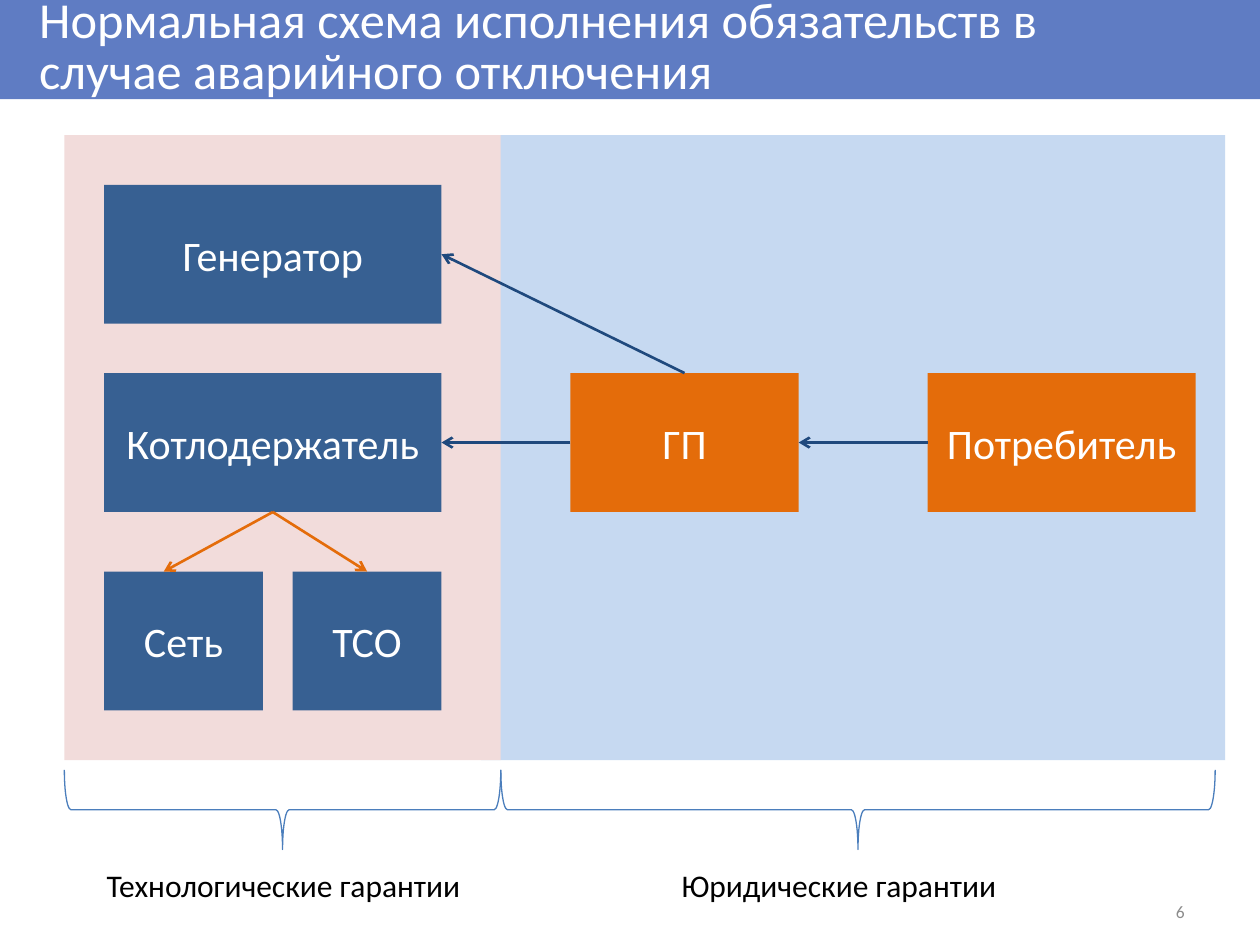
"""Build a slide on how obligations are met after an emergency outage."""
from dataclasses import dataclass

from lxml import etree
from pptx import Presentation
from pptx.dml.color import RGBColor
from pptx.enum.shapes import MSO_CONNECTOR, MSO_SHAPE
from pptx.enum.text import MSO_ANCHOR, MSO_AUTO_SIZE, PP_ALIGN
from pptx.oxml.ns import qn
from pptx.util import Pt

RECTANGLE, LEFT_BRACE = MSO_SHAPE.RECTANGLE, MSO_SHAPE.LEFT_BRACE
STRAIGHT = MSO_CONNECTOR.STRAIGHT
MIDDLE = MSO_ANCHOR.MIDDLE
LEFT, CENTER, RIGHT = PP_ALIGN.LEFT, PP_ALIGN.CENTER, PP_ALIGN.RIGHT
FIXED_SIZE = MSO_AUTO_SIZE.NONE
TOP_SIDE, LEFT_SIDE, BOTTOM_SIDE, RIGHT_SIDE = range(4)
TITLE_ONLY = 5


@dataclass(frozen=True)
class Theme:
    """Colours, font and type sizes of the slide."""
    font: str = "Calibri"
    band: str = "5F7CC3"
    legal_panel: str = "C6D9F1"
    technical_panel: str = "F2DCDB"
    blue_box: str = "376092"
    orange: str = "E46C0A"
    navy: str = "1F497D"
    brace: str = "4B7EBC"
    white: str = "FFFFFF"
    black: str = "000000"
    grey: str = "8C8C8C"
    title_size: float = 28.8
    box_size: float = 24
    label_size: float = 18
    number_size: float = 10


THEME = Theme()


def format_text(text_frame, text, size, color, alignment=LEFT):
    """Write one paragraph and return it formatted."""
    text_frame.word_wrap = True
    text_frame.text = text
    paragraph = text_frame.paragraphs[0]
    paragraph.alignment = alignment
    paragraph.font.name = THEME.font
    paragraph.font.size = Pt(size)
    paragraph.font.color.rgb = RGBColor.from_string(color)
    return paragraph


def add_rectangle(slide, left, top, width, height, color):
    """Add a plain filled rectangle."""
    shape = slide.shapes.add_shape(RECTANGLE, Pt(left), Pt(top), Pt(width), Pt(height))
    shape.shadow.inherit = False
    shape.fill.solid()
    shape.fill.fore_color.rgb = RGBColor.from_string(color)
    shape.line.fill.background()
    return shape


def add_box(slide, text, left, top, width, color):
    """Add a participant box with centred text."""
    shape = add_rectangle(slide, left, top, width, 79.4, color)
    shape.text_frame.vertical_anchor = MIDDLE
    format_text(shape.text_frame, text, THEME.box_size, THEME.white, CENTER)
    return shape


def add_arrow(slide, source, source_side, color, end_left=0, end_top=0):
    """Add an arrow from the side of a box to a point."""
    connector = slide.shapes.add_connector(STRAIGHT, 0, 0, Pt(end_left), Pt(end_top))
    connector.begin_connect(source, source_side)
    connector.line.width = Pt(1.5)
    connector.line.color.rgb = RGBColor.from_string(color)
    line = connector.line._get_or_add_ln()
    etree.SubElement(line, qn("a:tailEnd"), type="arrow")
    etree.SubElement(connector.element.spPr, qn("a:effectLst"))
    return connector


def join_boxes(slide, source, source_side, target, target_side, color):
    """Join two boxes with an arrow pointing at the target."""
    add_arrow(slide, source, source_side, color).end_connect(target, target_side)


def add_brace(slide, left, top, span, depth):
    """Add a brace that opens upwards over a horizontal span."""
    brace_left = left + (span - depth) / 2
    brace_top = top + (depth - span) / 2
    brace = slide.shapes.add_shape(
        LEFT_BRACE, Pt(brace_left), Pt(brace_top), Pt(depth), Pt(span))
    brace.rotation = 270
    brace.shadow.inherit = False
    brace.fill.background()
    brace.line.width = Pt(0.75)
    brace.line.color.rgb = RGBColor.from_string(THEME.brace)


def add_label(slide, text, left, top, width, height, size, color, alignment=LEFT):
    """Add a text box with one line of text."""
    box = slide.shapes.add_textbox(Pt(left), Pt(top), Pt(width), Pt(height))
    format_text(box.text_frame, text, size, color, alignment)
    return box


def add_title(slide, text):
    """Place the title over a coloured band."""
    band = add_rectangle(slide, 0, 0, 720, 56.7, THEME.band)
    title = slide.shapes.title
    band.element.addnext(title.element)
    title.left, title.top, title.width, title.height = Pt(19.5), Pt(-0.6), Pt(623.5), Pt(57)
    frame = title.text_frame
    frame.auto_size = FIXED_SIZE
    frame.vertical_anchor = MIDDLE
    frame.margin_left = frame.margin_right = Pt(2.9)
    frame.margin_top = frame.margin_bottom = Pt(2.9)
    format_text(frame, text, THEME.title_size, THEME.white).line_spacing = 0.85


def add_scheme(slide):
    """Add the participants and the arrows between them."""
    column, middle_row, bottom_row = 59.5, 213.2, 326.6
    generator = add_box(slide, "Генератор", column, 105.6, 192.8, THEME.blue_box)
    holder = add_box(slide, "Котлодержатель", column, middle_row, 192.8, THEME.blue_box)
    add_box(slide, "Сеть", column, bottom_row, 90.7, THEME.blue_box)
    local_grid = add_box(slide, "ТСО", 167.2, bottom_row, 85.1, THEME.blue_box)
    supplier = add_box(slide, "ГП", 326, middle_row, 130.4, THEME.orange)
    consumer = add_box(slide, "Потребитель", 530.1, middle_row, 153.1, THEME.orange)

    join_boxes(slide, supplier, TOP_SIDE, generator, RIGHT_SIDE, THEME.navy)
    join_boxes(slide, consumer, LEFT_SIDE, supplier, RIGHT_SIDE, THEME.navy)
    join_boxes(slide, supplier, LEFT_SIDE, holder, RIGHT_SIDE, THEME.navy)
    join_boxes(slide, holder, BOTTOM_SIDE, local_grid, TOP_SIDE, THEME.orange)
    add_arrow(slide, holder, BOTTOM_SIDE, THEME.orange, 93.6, bottom_row)


def main():
    """Build and save the presentation."""
    presentation = Presentation()
    presentation.slide_width, presentation.slide_height = Pt(720), Pt(540)
    slide = presentation.slides.add_slide(presentation.slide_layouts[TITLE_ONLY])

    add_title(slide, "Нормальная схема исполнения обязательств в случае аварийного отключения")
    add_rectangle(slide, 275, 77.2, 425.2, 357.2, THEME.legal_panel)
    add_rectangle(slide, 36.8, 77.2, 249.4, 357.2, THEME.technical_panel)
    add_scheme(slide)

    guarantees = (
        ("Технологические гарантии", 36.8, 249.4, 53.8),
        ("Юридические гарантии", 286.2, 408.2, 382.5),
    )
    for text, brace_left, span, label_left in guarantees:
        add_brace(slide, brace_left, 440, span, 45.4)
        add_label(slide, text, label_left, 491.3, 238.1, 29.1, THEME.label_size, THEME.black)

    number = add_label(slide, "6", 652.3, 512, 31.7, 17.3, THEME.number_size, THEME.grey, RIGHT)
    number.text_frame.vertical_anchor = MIDDLE
    presentation.save("out.pptx")


if __name__ == "__main__":
    main()
